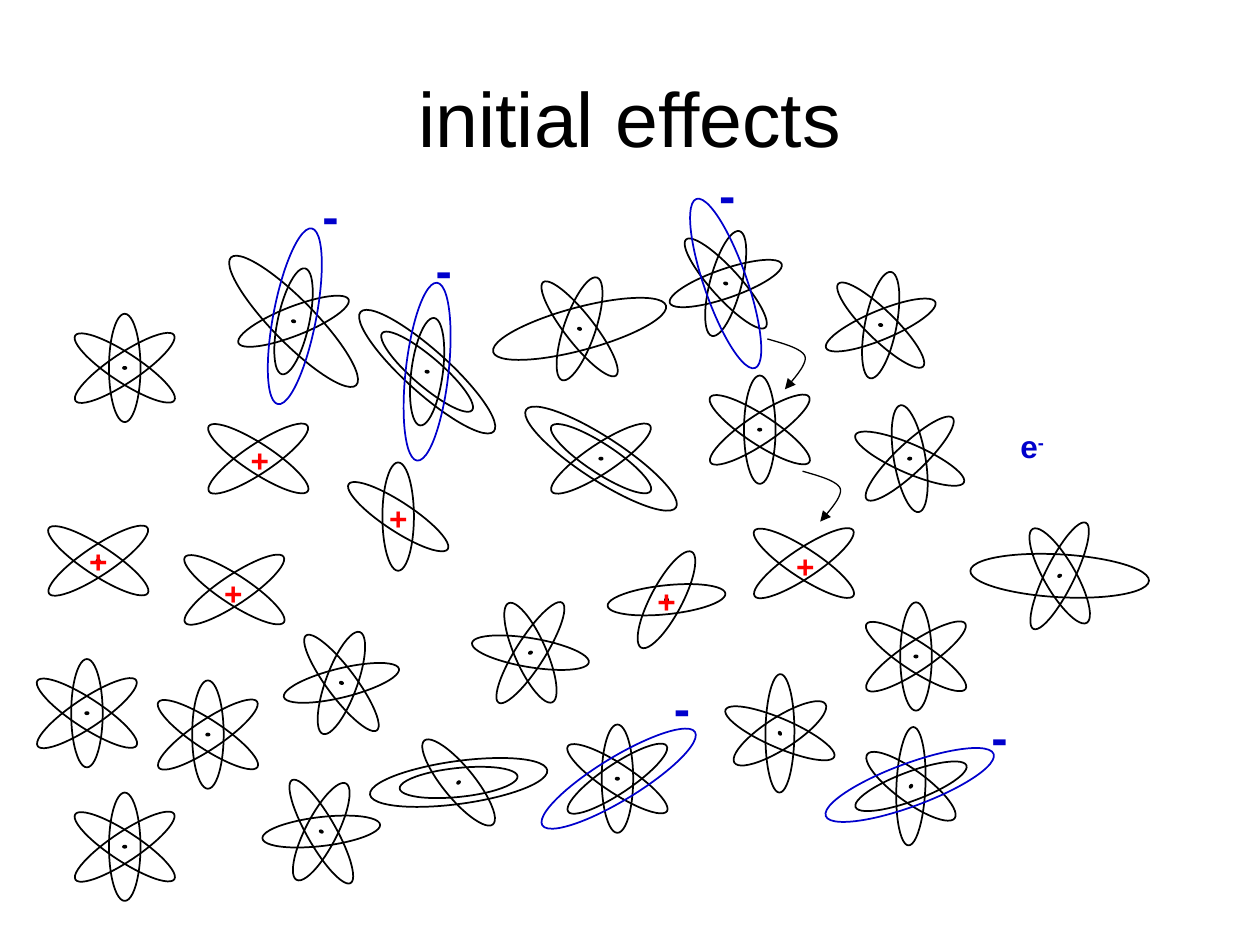
"""Build the slide "initial effects": neutral, distorted and ionised atoms."""
from pptx import Presentation
from pptx.dml.color import RGBColor
from pptx.enum.shapes import MSO_SHAPE
from pptx.enum.text import MSO_ANCHOR, PP_ALIGN
from pptx.oxml.ns import qn
from pptx.util import Inches, Pt
from lxml import etree

OVAL = MSO_SHAPE.OVAL
MIDDLE = MSO_ANCHOR.MIDDLE
LEFT, CENTER = PP_ALIGN.LEFT, PP_ALIGN.CENTER

BLACK, BLUE, RED = "000000", "0000CC", "FF0000"
SHORT, LONG, STRETCHED = (0.86, 0.25), (0.94, 0.23), (1.42, 0.34)
NUCLEUS = (0.02, 0.03)

MAIN, BACK, FORWARD = (SHORT, 0), (LONG, -56.75), (LONG, 56.2)
WHOLE = (MAIN, BACK, FORWARD)
CROSS = (BACK, FORWARD)

WHOLE_ATOMS = [
    (0.99, 2.92, 270), (0.69, 5.66, 270), (0.99, 6.72, 270), (1.65, 5.83, 270),
    (2.55, 6.6, 297.1), (2.71, 5.42, 290), (4.21, 5.18, 246.2), (4.9, 6.18, 270),
    (5.76, 2.25, 284.7), (6.03, 3.41, 270), (6.19, 5.82, 327.2), (6.99, 2.58, 281.1),
    (7.22, 3.64, 260.3), (7.23, 6.24, 216.2), (7.27, 5.21, 270),
]
DISTORTED_ATOMS = [
    (4.6, 2.61, 288.8, (MAIN, BACK), 345),
    (2.33, 2.55, 282.3, (MAIN, FORWARD), 225.6),
    (4.77, 3.64, 270, CROSS, 33.1),
    (3.64, 6.21, 230.8, (MAIN, BACK), 352.2),
    (3.39, 2.95, 277.4, (MAIN, BACK), 41.9),
    (8.41, 4.57, 240.1, (MAIN, FORWARD), 3.2),
]
IONS = [
    (0.78, 4.45, 270, CROSS), (1.86, 4.68, 270, CROSS), (2.05, 3.64, 270, CROSS),
    (6.38, 4.47, 270, CROSS), (3.16, 4.1, 270, (MAIN, BACK)),
    (5.29, 4.76, 297.8, (MAIN, FORWARD)),
]
ION_NUCLEI = [(0.78, 4.45), (5.29, 4.76)]
CAPTURED_ORBITS = [
    (7.22, 6.23, 339.7), (4.91, 6.18, 328.6), (5.76, 2.25, 250.9),
    (2.34, 2.51, 280.9), (3.39, 2.95, 276.4),
]
MINUS_SIGNS = [(7.77, 5.56), (5.25, 5.33), (5.61, 1.26), (3.36, 1.85), (2.46, 1.42)]
PLUS_SIGNS = [(2.99, 3.91), (6.22, 4.29), (1.89, 3.45), (1.68, 4.51), (0.61, 4.25), (5.12, 4.57)]
ELECTRON_JUMPS = [(6.09, 2.69), (6.37, 3.74)]
JUMP_CURVES = [
    ((0, 0), (0.14, 0.04), (0.28, 0.08), (0.3, 0.14)),
    ((0.3, 0.14), (0.32, 0.21), (0.17, 0.36), (0.14, 0.4)),
]
CURVE_STEPS = 12


def color(code):
    """Turn a hex string into a colour."""
    return RGBColor.from_string(code)


def curve_point(curve, t):
    """Return the point at t on a cubic curve."""
    weights = ((1 - t) ** 3, 3 * t * (1 - t) ** 2, 3 * t * t * (1 - t), t ** 3)
    return tuple(sum(w * point[axis] for w, point in zip(weights, curve)) for axis in (0, 1))


class AtomSlide:
    """Hold the style and the current slide."""

    font = "Arial"

    def __init__(self, slide):
        """Keep the slide to draw on."""
        self.slide = slide

    def ellipse(self, x, y, size, angle, line=BLACK, fill=None, weight=1):
        """Draw a turned ellipse around a centre."""
        width, height = size
        shape = self.slide.shapes.add_shape(
            OVAL, Inches(x - width / 2), Inches(y - height / 2), Inches(width), Inches(height))
        shape.rotation = angle % 360
        shape.shadow.inherit = False
        shape.line.color.rgb = color(line)
        shape.line.width = Pt(weight)
        if fill:
            shape.fill.solid()
            shape.fill.fore_color.rgb = color(fill)
        else:
            shape.fill.background()

    def nucleus(self, x, y, angle=270):
        """Draw the dot at the heart of an atom."""
        self.ellipse(x, y, NUCLEUS, angle, fill=BLACK, weight=0.75)

    def orbits(self, x, y, angle, orbits=WHOLE):
        """Draw the orbits of an atom around its centre."""
        for size, offset in orbits:
            self.ellipse(x, y, size, angle + offset)

    def text(self, x, y, width, height, words, size, code=BLACK, bold=False,
             align=LEFT, superscript=None):
        """Write one line of text."""
        box = self.slide.shapes.add_textbox(Inches(x), Inches(y), Inches(width), Inches(height))
        frame = box.text_frame
        frame.word_wrap = True
        frame.vertical_anchor = MIDDLE if align == CENTER else frame.vertical_anchor
        paragraph = frame.paragraphs[0]
        paragraph.alignment = align
        paragraph.add_run().text = words
        if superscript:
            run = paragraph.add_run()
            run.text = superscript
            run._r.get_or_add_rPr().set("baseline", "30000")
        paragraph.font.name = self.font
        paragraph.font.size = Pt(size)
        paragraph.font.bold = bold
        paragraph.font.color.rgb = color(code)

    def jump(self, x, y):
        """Draw a curved arrow from a starting point."""
        points = [curve_point(curve, step / CURVE_STEPS)
                  for curve in JUMP_CURVES for step in range(1, CURVE_STEPS + 1)]
        builder = self.slide.shapes.build_freeform(Inches(x), Inches(y))
        builder.add_line_segments([(Inches(x + dx), Inches(y + dy)) for dx, dy in points], close=False)
        shape = builder.convert_to_shape()
        shape.shadow.inherit = False
        shape.fill.background()
        shape.line.color.rgb = color(BLACK)
        shape.line.width = Pt(0.75)
        etree.SubElement(shape.line._get_or_add_ln(), qn("a:tailEnd"), type="triangle")


def main():
    """Build and save the presentation."""
    presentation = Presentation()
    presentation.slide_width, presentation.slide_height = Inches(10), Inches(7.5)
    page = AtomSlide(presentation.slides.add_slide(presentation.slide_layouts[6]))
    page.text(0.5, 0.3, 9, 1.25, "initial effects", 44, align=CENTER)
    for x, y, angle in WHOLE_ATOMS:
        page.orbits(x, y, angle)
        page.nucleus(x, y, angle)
    for x, y, angle, orbits, stretch in DISTORTED_ATOMS:
        page.orbits(x, y, angle, orbits)
        page.ellipse(x, y, STRETCHED, stretch)
        page.nucleus(x, y, angle)
    for ion in IONS:
        page.orbits(*ion)
    for x, y in ION_NUCLEI:
        page.nucleus(x, y)
    for x, y, angle in CAPTURED_ORBITS:
        page.ellipse(x, y, STRETCHED, angle, line=BLUE)
    for x, y in MINUS_SIGNS:
        page.text(x, y, 0.4, 0.57, "-", 28, BLUE, bold=True)
    for x, y in PLUS_SIGNS:
        page.text(x, y, 0.4, 0.4, "+", 18, RED, bold=True)
    page.text(8, 3.34, 0.4, 0.4, "e", 18, BLUE, bold=True, superscript="-")
    for x, y in ELECTRON_JUMPS:
        page.jump(x, y)
    presentation.save("out.pptx")


if __name__ == "__main__":
    main()
